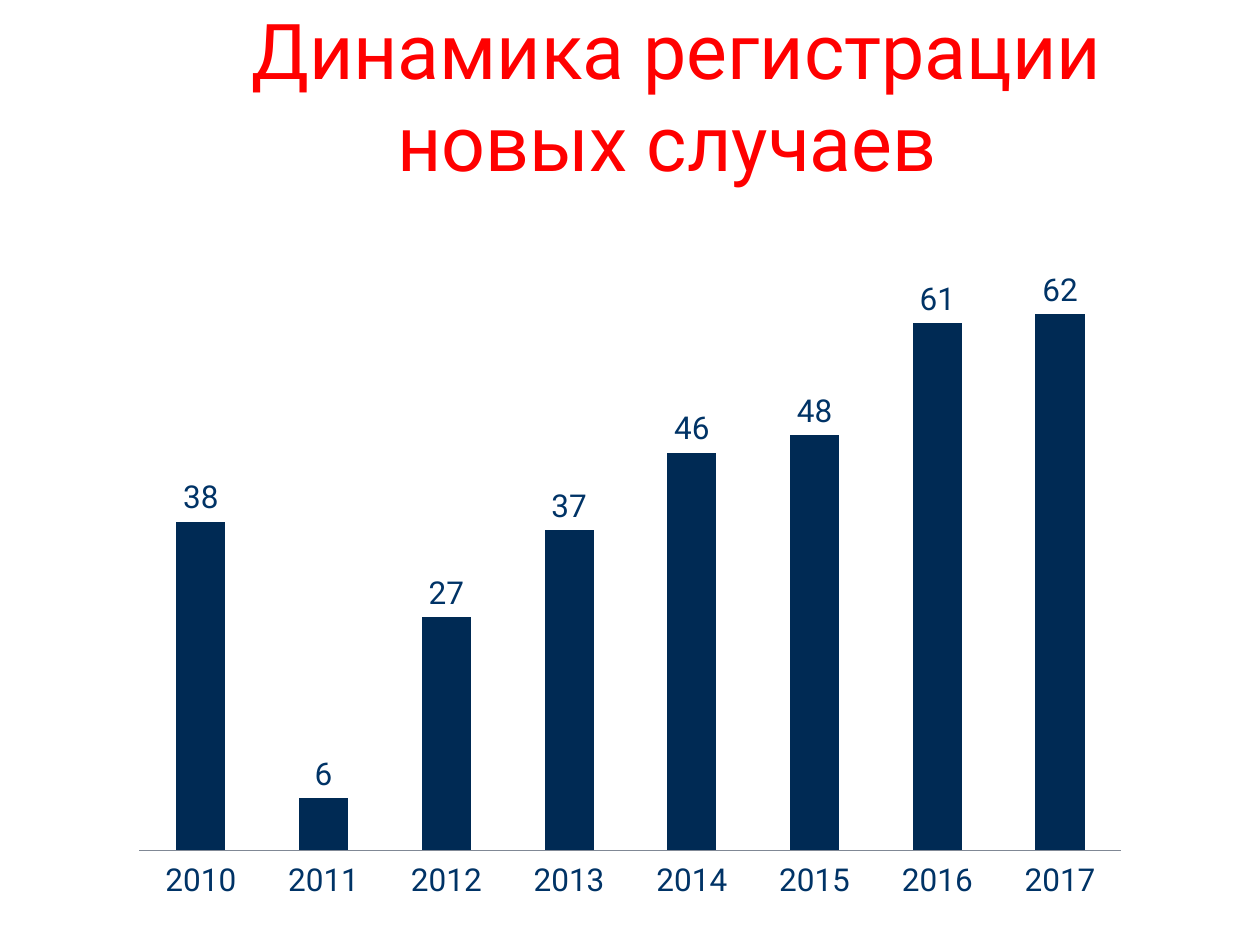
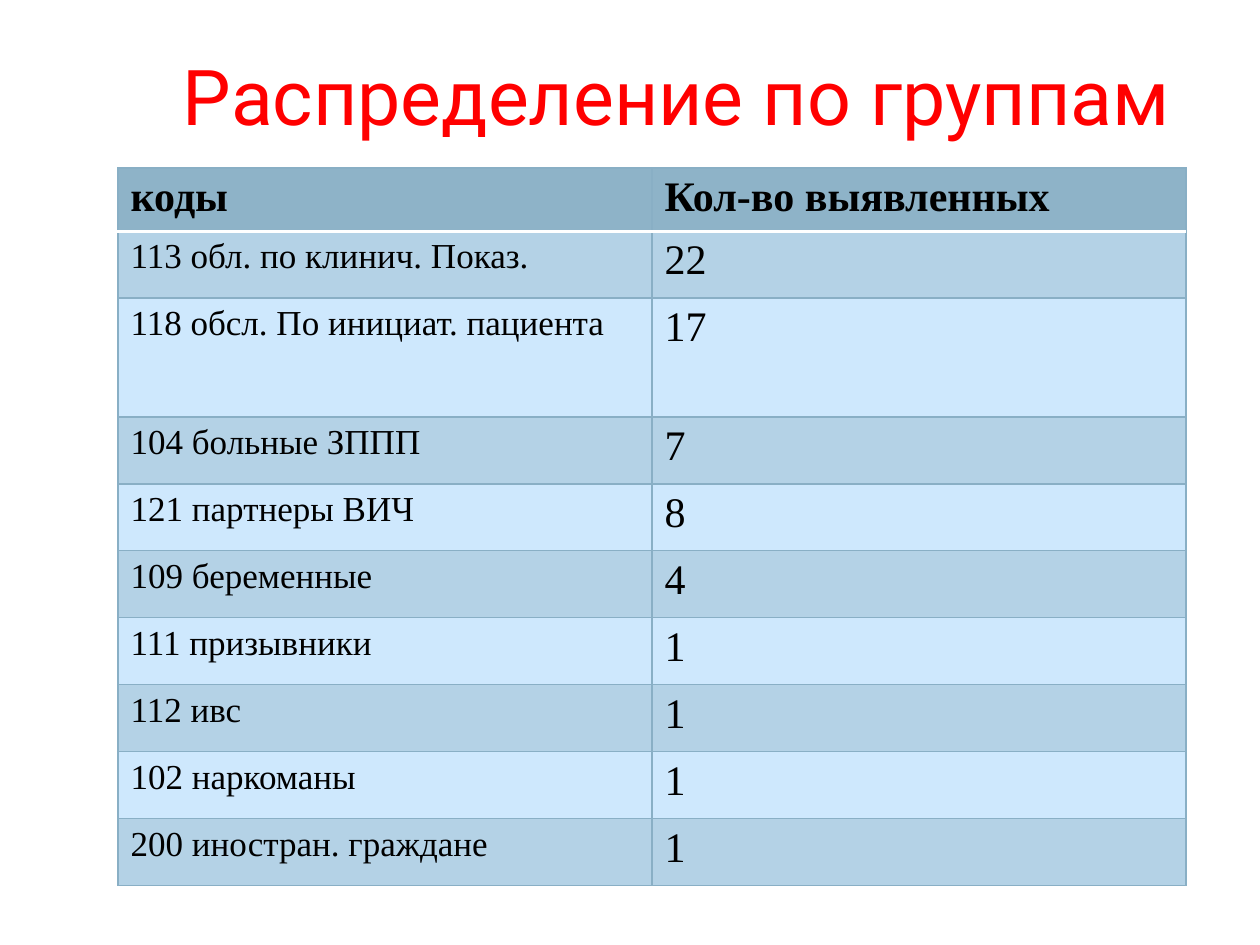
from lxml.etree import SubElement
from pptx import Presentation
from pptx.chart.data import CategoryChartData
from pptx.dml.color import RGBColor
from pptx.enum.chart import XL_CHART_TYPE, XL_LABEL_POSITION, XL_TICK_LABEL_POSITION, XL_TICK_MARK
from pptx.enum.text import MSO_ANCHOR, PP_ALIGN
from pptx.oxml import parse_xml
from pptx.oxml.ns import nsdecls, qn
from pptx.util import Emu, Pt

# Content
CASES_TITLE = "Динамика регистрации новых случаев "
CASES_BY_YEAR = {
    "2010": 38, "2011": 6, "2012": 27, "2013": 37,
    "2014": 46, "2015": 48, "2016": 61, "2017": 62,
}
GROUPS_TITLE = "Распределение по группам"
GROUPS_HEADER = ("коды", "Кол-во выявленных")
GROUPS = [
    ("113 обл. по клинич. Показ.", "22"),
    ("118 обсл. По инициат. пациента", "17"),
    ("104 больные ЗППП", "7"),
    ("121 партнеры ВИЧ", "8"),
    ("109 беременные", "4"),
    ("111 призывники", "1"),
    ("112 ивс", "1"),
    ("102 наркоманы", "1"),
    ("200 иностран. граждане", "1"),
]

# Shared style
TITLE_FONT, TABLE_FONT = "Roboto", "Times New Roman"
RED = RGBColor(0xFF, 0x00, 0x00)
BLACK = RGBColor(0x00, 0x00, 0x00)
WHITE = RGBColor(0xFF, 0xFF, 0xFF)
BAR = RGBColor(0x00, 0x2A, 0x54)
CHART_TEXT = RGBColor(0x00, 0x33, 0x66)
AXIS = RGBColor(0x80, 0x88, 0x95)
HEADER_FILL = RGBColor(0x8E, 0xB3, 0xC8)
BAND_FILLS = (RGBColor(0xB4, 0xD2, 0xE6), RGBColor(0xCE, 0xE8, 0xFD))
GRID = RGBColor(0x89, 0xAF, 0xC5)

# Geometry in px, 126 to the inch
SLIDE_SIZE = (1260, 945)
TITLE_BOX = (168, 21, 1018, 147)
CHART_BOX = (118, 231, 1024, 674)
PLOT_BOX = (139, 245, 982, 605)
TABLE_LEFT, TABLE_TOP, COLUMN_WIDTH = 118, 168, 534
HEADER_HEIGHT, ROW_HEIGHT, TALL_ROW_HEIGHT = 62, 67, 119
TALL_ROW = 2


def px(length):
    return Emu(round(length * 914400 / 126))


def add_run(paragraph, text, font, size, color, bold=False):
    run = paragraph.add_run()
    run.text = text
    run.font.name, run.font.size, run.font.bold = font, Pt(size), bold
    run.font.color.rgb = color


def add_titled_slide(presentation, title):
    slide = presentation.slides.add_slide(presentation.slide_layouts[6])
    frame = slide.shapes.add_textbox(*map(px, TITLE_BOX)).text_frame
    frame.word_wrap = True
    frame.vertical_anchor = MSO_ANCHOR.MIDDLE
    paragraph = frame.paragraphs[0]
    paragraph.alignment = PP_ALIGN.CENTER
    add_run(paragraph, title, TITLE_FONT, 44, RED)
    return slide


def set_plot_layout(chart):
    """Fix the inner plot area as fractions of the chart box."""
    left, top, width, height = CHART_BOX
    plot_left, plot_top, plot_width, plot_height = PLOT_BOX
    fractions = {
        "x": (plot_left - left) / width, "y": (plot_top - top) / height,
        "w": plot_width / width, "h": plot_height / height,
    }
    plot_area = chart.plots[0]._element.getparent()
    for old_layout in plot_area.findall(qn("c:layout")):
        plot_area.remove(old_layout)
    layout = parse_xml(f"<c:layout {nsdecls('c')}><c:manualLayout/></c:layout>")
    settings = [("layoutTarget", "inner"), ("xMode", "edge"), ("yMode", "edge")]
    settings += [(key, f"{value:.3f}") for key, value in fractions.items()]
    for tag, value in settings:
        SubElement(layout[0], qn(f"c:{tag}")).set("val", value)
    plot_area.insert(0, layout)


def add_cases_chart(slide):
    data = CategoryChartData()
    data.categories = list(CASES_BY_YEAR)
    data.add_series("Series 1", list(CASES_BY_YEAR.values()))
    chart = slide.shapes.add_chart(
        XL_CHART_TYPE.COLUMN_CLUSTERED, *map(px, CHART_BOX), data).chart
    chart.has_legend = chart.has_title = False
    chart.font.name, chart.font.size = TITLE_FONT, Pt(18)
    chart.font.color.rgb = CHART_TEXT
    set_plot_layout(chart)

    # Bars and their values
    plot = chart.plots[0]
    plot.gap_width, plot.overlap, plot.vary_by_categories = 150, -25, False
    fill = plot.series[0].format.fill
    fill.solid()
    fill.fore_color.rgb = BAR
    plot.has_data_labels = True
    plot.data_labels.show_value = True
    plot.data_labels.position = XL_LABEL_POSITION.OUTSIDE_END

    # Axes
    years, cases = chart.category_axis, chart.value_axis
    years.major_tick_mark = years.minor_tick_mark = XL_TICK_MARK.NONE
    years.tick_label_position = XL_TICK_LABEL_POSITION.LOW
    years.format.line.color.rgb = AXIS
    years.format.line.width = Pt(0.75)
    cases.minimum_scale, cases.maximum_scale = 0, 70
    cases.has_major_gridlines = False
    cases.visible = False


def set_borders(cell, edges):
    properties = cell._tc.get_or_add_tcPr()
    for index, side in enumerate("LRTB"):
        color, width = edges.get(side, (GRID, 0.75))
        properties.insert(index, parse_xml(
            f'<a:ln{side} {nsdecls("a")} w="{Pt(width)}"><a:solidFill>'
            f'<a:srgbClr val="{color}"/></a:solidFill></a:ln{side}>'))


def add_groups_table(slide):
    rows = [GROUPS_HEADER] + GROUPS
    heights = [HEADER_HEIGHT] + [ROW_HEIGHT] * len(GROUPS)
    heights[TALL_ROW] = TALL_ROW_HEIGHT
    column_count = len(GROUPS_HEADER)
    table = slide.shapes.add_table(
        len(rows), column_count, px(TABLE_LEFT), px(TABLE_TOP),
        px(COLUMN_WIDTH * column_count), px(sum(heights))).table
    table.first_row = table.horz_banding = False
    for column in table.columns:
        column.width = px(COLUMN_WIDTH)

    header_rule = (WHITE, 2)
    for row_index, (texts, height) in enumerate(zip(rows, heights)):
        table.rows[row_index].height = px(height)
        is_header = row_index == 0
        edges = {0: {"B": header_rule}, 1: {"T": header_rule}}.get(row_index, {})
        for column_index, text in enumerate(texts):
            cell = table.cell(row_index, column_index)
            cell.fill.solid()
            cell.fill.fore_color.rgb = HEADER_FILL if is_header else BAND_FILLS[(row_index - 1) % 2]
            set_borders(cell, edges)
            paragraph = cell.text_frame.paragraphs[0]
            paragraph.alignment = PP_ALIGN.LEFT
            size = 24 if is_header or column_index else 20
            add_run(paragraph, text, TABLE_FONT, size, BLACK, is_header)


def main():
    presentation = Presentation()
    presentation.slide_width, presentation.slide_height = map(px, SLIDE_SIZE)
    add_cases_chart(add_titled_slide(presentation, CASES_TITLE))
    add_groups_table(add_titled_slide(presentation, GROUPS_TITLE))
    presentation.save("out.pptx")


if __name__ == "__main__":
    main()
